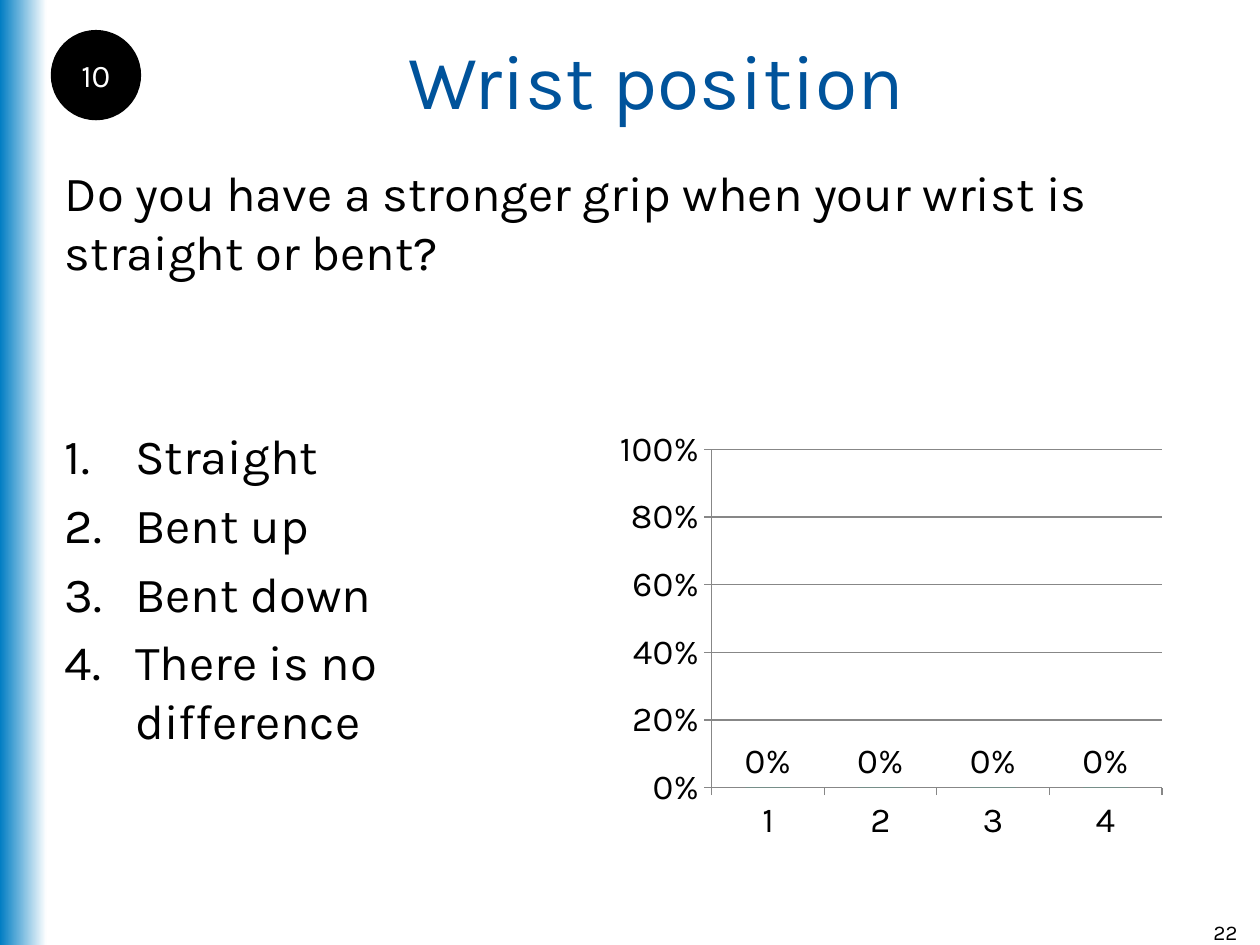
import pptx
import pptx.chart.data
import pptx.dml.color
import pptx.enum.chart
import pptx.enum.shapes
import pptx.enum.text
import pptx.util
from lxml import etree
from pptx.util import Cm, Pt

COLORS = {
    "band": "007DC3",
    "title": "00539B",
    "text": "000000",
    "white": "FFFFFF",
    "bar": "00CC99",
    "grid": "878787",
}
FONT = "Karla"
ALIGN = pptx.enum.text.PP_ALIGN
ANCHOR = pptx.enum.text.MSO_ANCHOR
SHAPES = pptx.enum.shapes.MSO_SHAPE


def rgb(name):
    return pptx.dml.color.RGBColor.from_string(COLORS[name])


def write(shape, text, size, color="text", align=ALIGN.LEFT, anchor=ANCHOR.TOP, wrap=True):
    """Fill a shape with text, one paragraph per line."""
    frame = shape.text_frame
    frame.text = text
    frame.word_wrap = wrap
    frame.vertical_anchor = anchor
    for paragraph in frame.paragraphs:
        paragraph.alignment = align
        for run in paragraph.runs:
            run.font.name = FONT
            run.font.size = Pt(size)
            run.font.color.rgb = rgb(color)
    return frame


presentation = pptx.Presentation()
presentation.slide_width = Cm(25.4)
presentation.slide_height = Cm(19.05)
slide = presentation.slides.add_slide(presentation.slide_layouts[6])
shapes = slide.shapes

# Side band
band = shapes.add_shape(SHAPES.RECTANGLE, 0, 0, Cm(0.94), Cm(19.05))
band.shadow.inherit = False
band.line.fill.background()
band.fill.gradient()
band.fill.gradient_angle = 0
for stop, color, position in zip(band.fill.gradient_stops, ("band", "white"), (0, 1)):
    stop.color.rgb = rgb(color)
    stop.position = position

# Title, page number and question
title = shapes.add_textbox(Cm(1.06), 0, Cm(24.34), Cm(3.18))
write(title, "Wrist position", 44, "title", ALIGN.CENTER, ANCHOR.MIDDLE)

page_number = shapes.add_textbox(Cm(23.93), Cm(18.42), Cm(1.27), Cm(0.64))
write(page_number, "22", 12, align=ALIGN.RIGHT)

question = shapes.add_textbox(Cm(1.06), Cm(3.15), Cm(23.29), Cm(1.91))
write(question, "Do you have a stronger grip when your wrist is straight or bent?", 28)

# Numbered answers
answers = ["Straight", "Bent up", "Bent down", "There is no difference"]
answer_box = shapes.add_textbox(Cm(1.06), Cm(8.46), Cm(11.38), Cm(10.59))
answer_frame = write(answer_box, "\n".join(answers), 28)
for index, paragraph in enumerate(answer_frame.paragraphs):
    if index:
        paragraph.space_before = Pt(5.6)
    properties = paragraph._p.get_or_add_pPr()
    properties.set("marL", str(Cm(1.42)))
    properties.set("indent", str(-Cm(1.42)))
    numbering = etree.SubElement(properties, pptx.oxml.ns.qn("a:buAutoNum"))
    numbering.set("type", "arabicPeriod")

# Poll results
chart_data = pptx.chart.data.CategoryChartData(number_format="0%")
chart_data.categories = ["1", "2", "3", "4"]
chart_data.add_series("Series 1", [0, 0, 0, 0])
chart = shapes.add_chart(
    pptx.enum.chart.XL_CHART_TYPE.COLUMN_CLUSTERED,
    Cm(12.27), Cm(8.46), Cm(11.38), Cm(8.69), chart_data,
).chart
chart.has_legend = False
chart.has_title = False
chart.font.name = FONT
chart.font.size = Pt(20)
chart.font.color.rgb = rgb("text")

for axis in (chart.category_axis, chart.value_axis):
    axis.major_tick_mark = pptx.enum.chart.XL_TICK_MARK.OUTSIDE
    axis.format.line.color.rgb = rgb("grid")
    axis.format.line.width = Pt(0.75)
value_axis = chart.value_axis
value_axis.minimum_scale = 0
value_axis.maximum_scale = 1
value_axis.major_unit = 0.2
value_axis.tick_labels.number_format = "0%"
value_axis.tick_labels.number_format_is_linked = False
value_axis.has_major_gridlines = True
value_axis.major_gridlines.format.line.color.rgb = rgb("grid")
value_axis.major_gridlines.format.line.width = Pt(0.75)

plot = chart.plots[0]
plot.gap_width = 150
plot.vary_by_categories = False
series = plot.series[0]
series.format.fill.solid()
series.format.fill.fore_color.rgb = rgb("bar")
labels = series.data_labels
labels.show_value = True
labels.number_format = "0%"
labels.number_format_is_linked = False
labels.position = pptx.enum.chart.XL_LABEL_POSITION.OUTSIDE_END

# Countdown disc
countdown = shapes.add_shape(SHAPES.OVAL, Cm(1.06), Cm(0.64), Cm(1.75), Cm(1.75))
countdown.shadow.inherit = False
countdown.fill.solid()
countdown.fill.fore_color.rgb = rgb("text")
countdown.line.color.rgb = rgb("text")
countdown.line.width = Pt(2)
frame = write(countdown, "10", 18, "white", ALIGN.CENTER, ANCHOR.MIDDLE, wrap=False)
frame.margin_left = frame.margin_right = frame.margin_top = frame.margin_bottom = 0

presentation.save("out.pptx")
